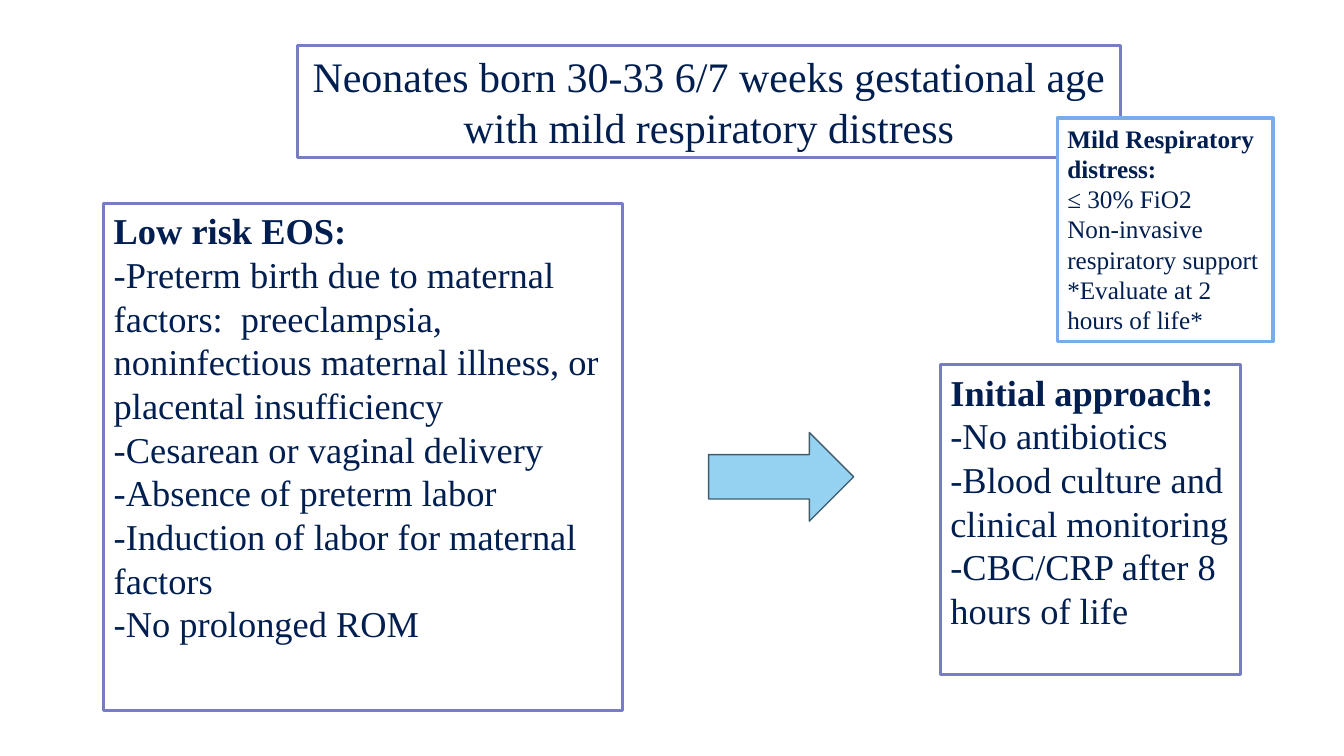
"""Build a slide on the initial approach to neonates with mild respiratory distress."""
from dataclasses import dataclass

from pptx import Presentation
from pptx.dml.color import RGBColor
from pptx.enum.shapes import MSO_SHAPE
from pptx.enum.text import MSO_ANCHOR, PP_ALIGN
from pptx.shapes.autoshape import Shape
from pptx.slide import Slide
from pptx.util import Pt


@dataclass(frozen=True)
class Theme:
    font: str = "Times New Roman"
    ink: str = "001E50"
    frame: str = "777DC3"
    note_frame: str = "76ADEB"
    paper: str = "FFFFFF"
    arrow: str = "95D1F1"
    arrow_edge: str = "415C6A"
    title: float = 30
    body: float = 26
    note: float = 18
    thick: float = 2.25
    thin: float = 1


@dataclass(frozen=True)
class Block:
    left: float
    top: float
    width: float
    height: float
    line: str
    fill: str | None = None
    weight: float = Theme.thick
    kind: MSO_SHAPE = MSO_SHAPE.RECTANGLE
    size: float = Theme.body
    heading: str = ""
    lines: tuple[str, ...] = ()
    align: PP_ALIGN = PP_ALIGN.LEFT
    anchor: MSO_ANCHOR = MSO_ANCHOR.TOP


BLOCKS = (
    Block(212.4, 32.4, 588.24, 79.92, Theme.frame, size=Theme.title,
          lines=("Neonates born 30-33 6/7 weeks gestational age with mild respiratory distress",),
          align=PP_ALIGN.CENTER, anchor=MSO_ANCHOR.MIDDLE),
    Block(74.16, 145.44, 370.8, 362.16, Theme.frame, heading="Low risk EOS:",
          lines=("-Preterm birth due to maternal factors:  preeclampsia, "
                 "noninfectious maternal illness, or placental insufficiency",
                 "-Cesarean or vaginal delivery",
                 "-Absence of preterm labor",
                 "-Induction of labor for maternal factors",
                 "-No prolonged ROM")),
    Block(671.76, 260.64, 214.56, 221.04, Theme.frame, heading="Initial approach:",
          lines=("-No antibiotics",
                 "-Blood culture and clinical monitoring",
                 "-CBC/CRP after 8 hours of life")),
    Block(506.16, 308.88, 103.68, 63.36, Theme.arrow_edge, Theme.arrow, Theme.thin,
          MSO_SHAPE.RIGHT_ARROW),
    Block(755.28, 84.24, 154.08, 159.84, Theme.note_frame, Theme.paper, size=Theme.note,
          heading="Mild Respiratory distress:",
          lines=("≤ 30% FiO2",
                 "Non-invasive respiratory support",
                 "*Evaluate at 2 hours of life*")),
)


def write_text(sp: Shape, block: Block) -> None:
    tf = sp.text_frame
    tf.word_wrap = True
    tf.vertical_anchor = block.anchor
    texts = ((block.heading,) if block.heading else ()) + block.lines
    for i, text in enumerate(texts):
        p = tf.add_paragraph() if i else tf.paragraphs[0]
        p.alignment = block.align
        r = p.add_run()
        r.text = text
        style = {"name": Theme.font, "size": Pt(block.size),
                 "bold": text == block.heading}
        for key, value in style.items():
            setattr(r.font, key, value)
        r.font.color.rgb = RGBColor.from_string(Theme.ink)


def draw_block(s: Slide, block: Block) -> None:
    sp = s.shapes.add_shape(block.kind, Pt(block.left), Pt(block.top),
                            Pt(block.width), Pt(block.height))
    sp.shadow.inherit = False
    if block.fill:
        sp.fill.solid()
        sp.fill.fore_color.rgb = RGBColor.from_string(block.fill)
    else:
        sp.fill.background()
    sp.line.color.rgb = RGBColor.from_string(block.line)
    sp.line.width = Pt(block.weight)
    if block.lines:
        write_text(sp, block)


def main() -> None:
    prs = Presentation()
    prs.slide_width, prs.slide_height = Pt(960), Pt(540)
    s = prs.slides.add_slide(prs.slide_layouts[6])
    for block in BLOCKS:
        draw_block(s, block)
    prs.save("out.pptx")


if __name__ == "__main__":
    main()
